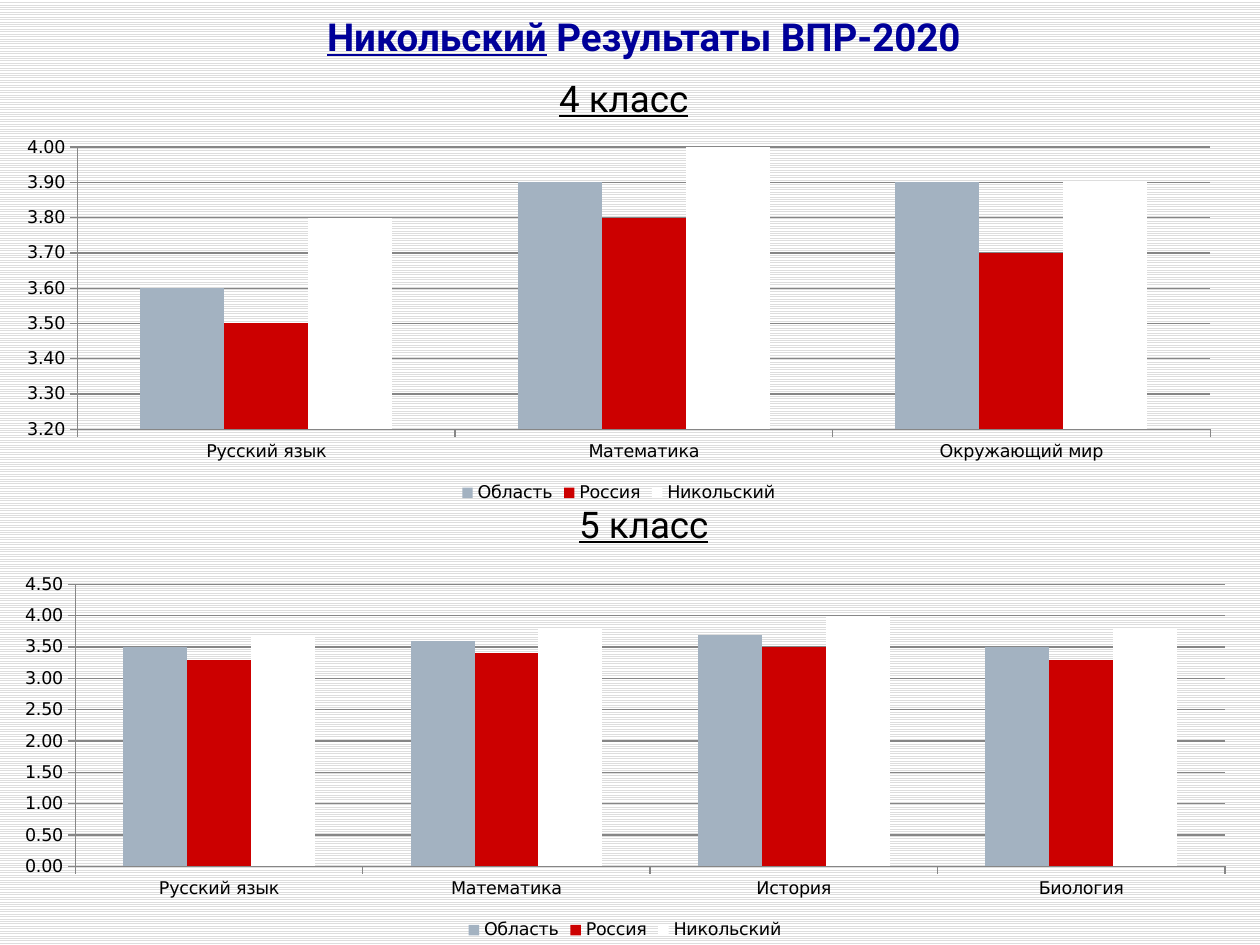
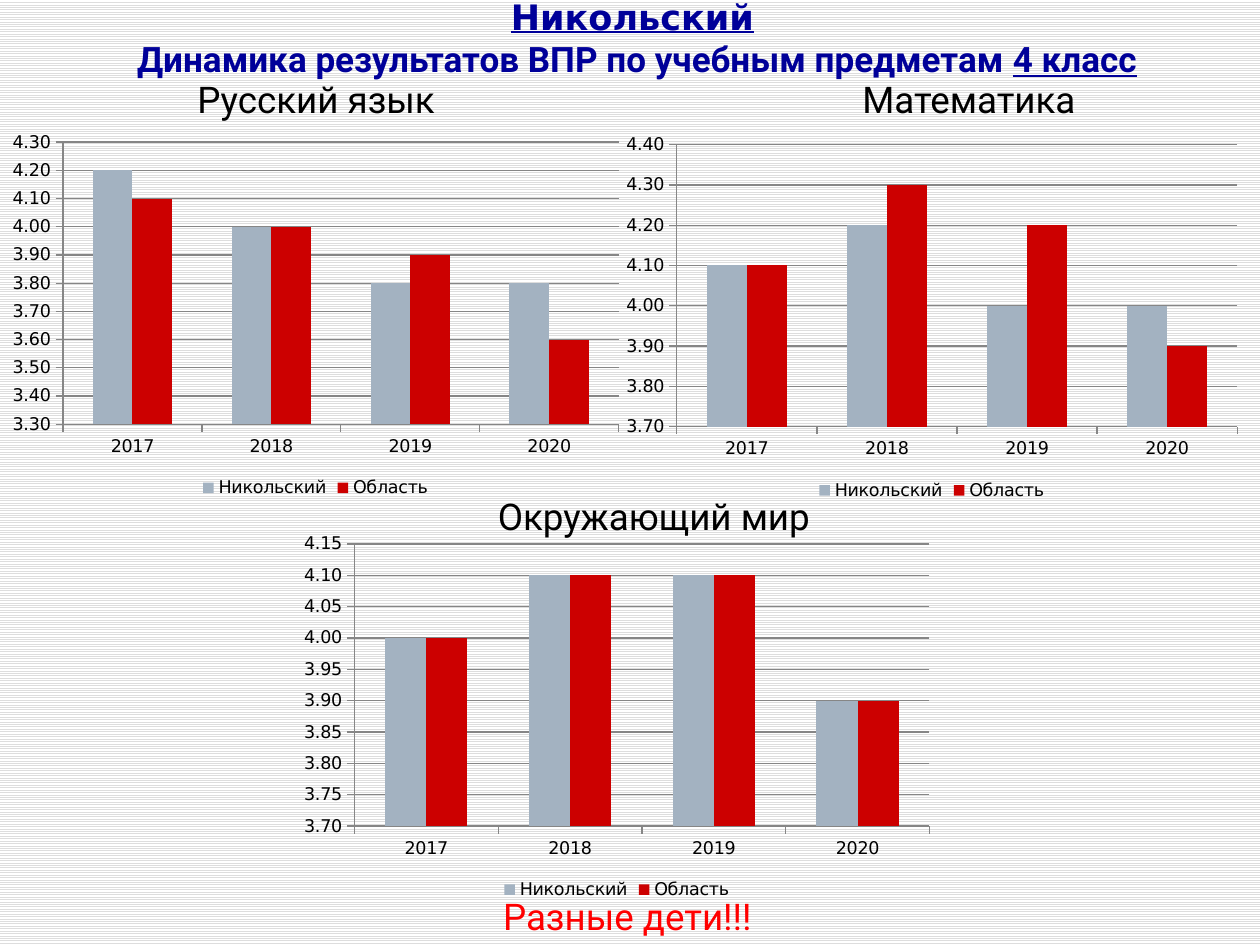
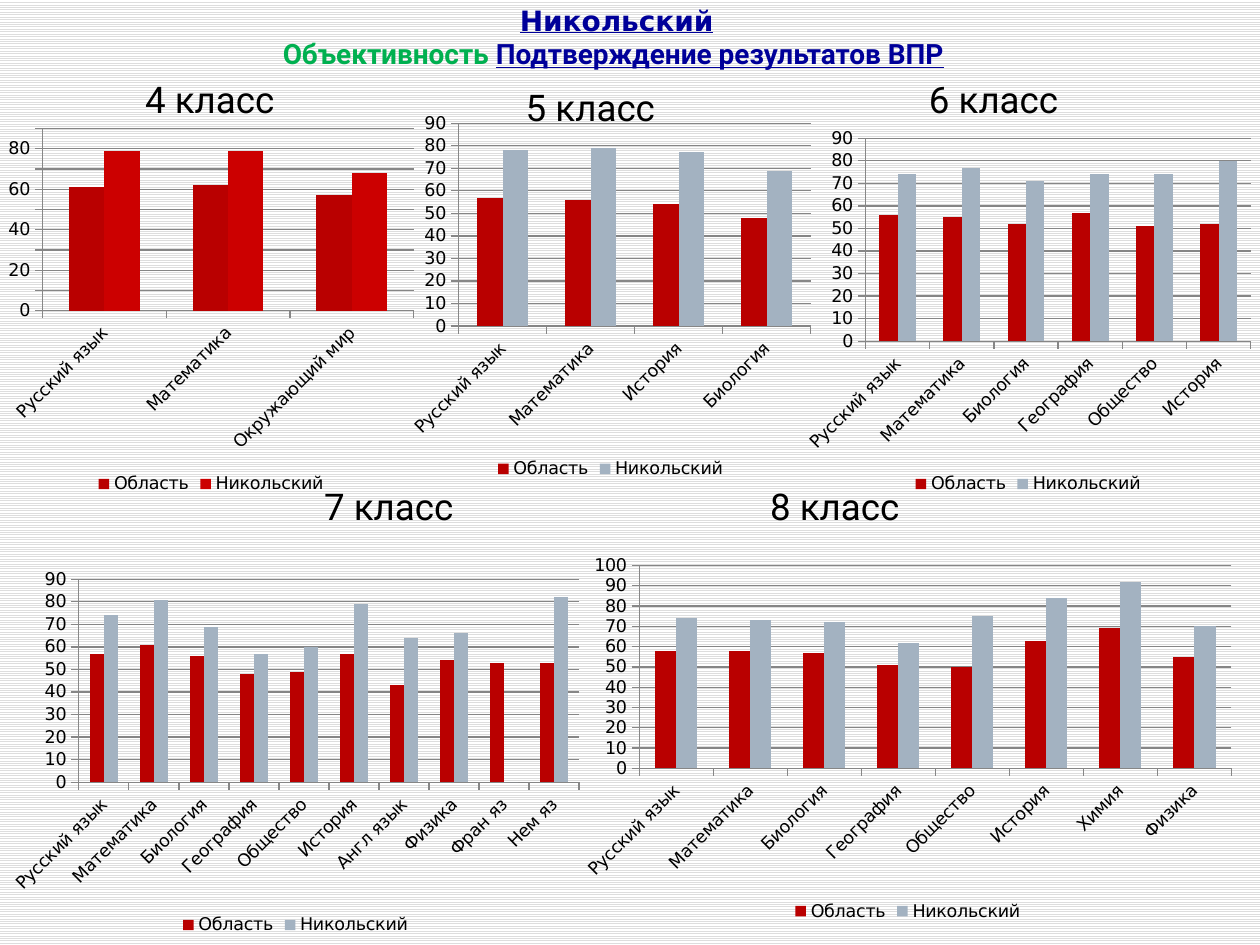
from pptx import Presentation
from pptx.chart.data import CategoryChartData
from pptx.dml.color import RGBColor
from pptx.enum import chart as ch, dml, text
from pptx.util import Inches, Pt

# Colours and fonts
BLACK = RGBColor(0x00, 0x00, 0x00)
WHITE = RGBColor(0xFF, 0xFF, 0xFF)
STRIPE = RGBColor(0xDD, 0xDD, 0xDD)
NAVY = RGBColor(0x00, 0x00, 0x99)
GREEN = RGBColor(0x00, 0xB0, 0x50)
BRIGHT = RGBColor(0xFF, 0x00, 0x00)
STEEL = RGBColor(0xA3, 0xB2, 0xC1)
RED = RGBColor(0xCC, 0x00, 0x00)
DARK = RGBColor(0xB9, 0x00, 0x00)
GREY = RGBColor(0x86, 0x86, 0x86)
HEAD, BODY = "Roboto", "DejaVu Sans"

# Words used on several slides
SCHOOL, REGION, NATION = "Никольский", "Область", "Россия"
RUS, MATH, WORLD = "Русский язык", "Математика", "Окружающий мир"
HIST, BIO, GEO, SOC = "История", "Биология", "География", "Общество"
YEARS = ["2017", "2018", "2019", "2020"]


class Deck:
    """Shared style and the current slide."""

    def __init__(self):
        self.prs = Presentation()
        self.prs.slide_width = Inches(10)
        self.prs.slide_height = Inches(7.5)
        fill = self.prs.slide_master.background.fill
        fill.patterned()
        fill.pattern = dml.MSO_PATTERN.LIGHT_HORIZONTAL
        fill.fore_color.rgb = STRIPE
        fill.back_color.rgb = WHITE
        self.slide = None

    def page(self):
        self.slide = self.prs.slides.add_slide(self.prs.slide_layouts[6])

    def frame(self, left, top, width, height):
        box = self.slide.shapes.add_textbox(
            Inches(left), Inches(top), Inches(width), Inches(height))
        frame = box.text_frame
        frame.word_wrap = True
        frame.vertical_anchor = text.MSO_ANCHOR.BOTTOM
        return frame

    def style(self, para, size, color, face=HEAD, bold=False):
        para.alignment = text.PP_ALIGN.CENTER
        font = para.font
        font.name, font.size, font.bold = face, Pt(size), bold
        font.color.rgb = color

    def label(self, words, left, top, width=5, color=BLACK, under=False):
        para = self.frame(left, top, width, 0.33).paragraphs[0]
        para.text = words
        self.style(para, 21, color)
        para.font.underline = under

    def title(self, left, top, width, size, lines):
        """Each line is (font, runs); each run is (words, underline, colour)."""
        frame = self.frame(left, top, width, 0.4)
        for i, (face, runs) in enumerate(lines):
            para = frame.add_paragraph() if i else frame.paragraphs[0]
            self.style(para, size, NAVY, face, True)
            for words, under, color in runs:
                run = para.add_run()
                run.text = words
                run.font.underline = under
                if color != NAVY:
                    run.font.color.rgb = color

    def chart(self, left, top, width, cats, rows, scale, digits="0.00", slant=False):
        """Each row is (name, colour, values); scale is (low, high, step)."""
        data = CategoryChartData(number_format=digits)
        data.categories = cats
        for name, _, vals in rows:
            data.add_series(name, vals)
        chart = self.slide.shapes.add_chart(
            ch.XL_CHART_TYPE.COLUMN_CLUSTERED, Inches(left), Inches(top),
            Inches(width), Inches(3), data).chart
        chart.has_title = False
        chart.font.name, chart.font.size = BODY, Pt(10)
        chart.font.color.rgb = BLACK
        chart.has_legend = True
        chart.legend.position = ch.XL_LEGEND_POSITION.BOTTOM
        chart.legend.include_in_layout = False

        # Columns
        plot = chart.plots[0]
        plot.gap_width, plot.vary_by_categories = 150, False
        for bars, (_, color, _) in zip(plot.series, rows):
            bars.format.fill.solid()
            bars.format.fill.fore_color.rgb = color
            bars.invert_if_negative = False

        # Axes
        cat, val = chart.category_axis, chart.value_axis
        val.minimum_scale, val.maximum_scale, val.major_unit = scale
        val.has_major_gridlines = True
        val.tick_labels.number_format = digits
        val.tick_labels.number_format_is_linked = False
        for part in (cat, val, val.major_gridlines):
            part.format.line.color.rgb = GREY
            part.format.line.width = Pt(0.75)
        for axis in (cat, val):
            axis.major_tick_mark = ch.XL_TICK_MARK.OUTSIDE
            axis.minor_tick_mark = ch.XL_TICK_MARK.NONE
            axis.tick_labels.font.size = Pt(10)
        if slant:
            cat._element.txPr.bodyPr.set("rot", "-2700000")


def results(deck):
    deck.page()
    deck.label("4 класс", 2.45, 0.67, under=True)
    deck.label("5 класс", 2.61, 4.05, under=True)
    deck.title(0.19, 0.12, 9.84, 22, [
        (HEAD, [(SCHOOL, True, NAVY), (" Результаты ВПР-2020", False, NAVY)])])
    names = [(REGION, STEEL), (NATION, RED), (SCHOOL, WHITE)]
    charts = [
        (0.02, 1.03, 9.78, ["Русcкий язык", MATH, WORLD], (3.2, 4, 0.1),
         [(3.6, 3.9, 3.9), (3.5, 3.8, 3.7), (3.8, 4, 3.9)]),
        (0, 4.5, 9.92, [RUS, MATH, HIST, BIO], (0, 4.5, 0.5),
         [(3.5, 3.6, 3.7, 3.5), (3.3, 3.4, 3.5, 3.3), (3.7, 3.8, 4, 3.8)]),
    ]
    for left, top, width, cats, scale, vals in charts:
        rows = [(*name, row) for name, row in zip(names, vals)]
        deck.chart(left, top, width, cats, rows, scale)


def trends(deck):
    deck.page()
    deck.title(0.01, 0.28, 10.02, 20, [
        (BODY, [(SCHOOL, True, NAVY)]),
        (HEAD, [(" Динамика результатов ВПР по учебным предметам ", False, NAVY),
                ("4 класс", True, NAVY)])])
    deck.label("Разные дети!!!", 2.48, 7.16, color=BRIGHT)
    # Subject, label place, chart place, scale, school and region values
    charts = [
        (RUS, (0.01, 0.68), (0, 0.99, 5.01), (3.3, 4.3, 0.1),
         (4.2, 4, 3.8, 3.8), (4.1, 4, 3.9, 3.6)),
        (MATH, (5.19, 0.68), (4.87, 1.01, 5.05), (3.7, 4.4, 0.1),
         (4.1, 4.2, 4, 4), (4.1, 4.3, 4.2, 3.9)),
        (WORLD, (2.69, 3.99), (2.31, 4.18, 5.17), (3.7, 4.15, 0.05),
         (4, 4.1, 4.1, 3.9), (4, 4.1, 4.1, 3.9)),
    ]
    for name, spot, place, scale, school, region in charts:
        deck.label(name, *spot)
        deck.chart(*place, YEARS,
                   [(SCHOOL, STEEL, school), (REGION, RED, region)], scale)


def proof(deck):
    deck.page()
    deck.title(-0.24, 0.21, 10.27, 16, [
        (BODY, [(SCHOOL, True, NAVY)]),
        (HEAD, [("Объективность ", False, GREEN),
                ("Подтверждение результатов ВПР", True, NAVY),
                (" ", False, NAVY)])])
    # Label place, chart place, top of scale, school colour, subjects, values
    charts = [
        ((0.51, 0.68, 2.31), (0, 0.96, 3.35), 90, RED, [RUS, MATH, WORLD],
         (61, 62, 57), (79, 79, 68)),
        ((3.69, 0.74, 1.99), (3.19, 0.84, 3.31), 90, STEEL,
         [RUS, MATH, HIST, BIO], (57, 56, 54, 48), (78, 79, 77, 69)),
        ((6.89, 0.68, 1.99), (6.32, 0.96, 3.68), 90, STEEL,
         [RUS, MATH, BIO, GEO, SOC, HIST],
         (56, 55, 52, 57, 51, 52), (74, 77, 71, 74, 74, 80)),
        ((2.09, 3.91, 1.99), (0, 4.46, 4.69), 90, STEEL,
         [RUS, MATH, BIO, GEO, SOC, HIST, "Англ язык", "Физика", "Фран яз", "Нем яз"],
         (57, 61, 56, 48, 49, 57, 43, 54, 53, 53),
         (74, 81, 69, 57, 60, 79, 64, 66, 0, 82)),
        ((5.63, 3.91, 1.99), (4.53, 4.35, 5.35), 100, STEEL,
         [RUS, MATH, BIO, GEO, SOC, HIST, "Химия", "Физика"],
         (58, 58, 57, 51, 50, 63, 69, 55), (74, 73, 72, 62, 75, 84, 92, 70)),
    ]
    for grade, (spot, place, high, color, cats, region, school) in enumerate(charts, 4):
        deck.label(f"{grade} класс", *spot)
        deck.chart(*place, cats, [(REGION, DARK, region), (SCHOOL, color, school)],
                   (0, high, 10), "General", slant=True)


def main():
    deck = Deck()
    results(deck)
    trends(deck)
    proof(deck)
    deck.prs.save("out.pptx")


if __name__ == "__main__":
    main()
